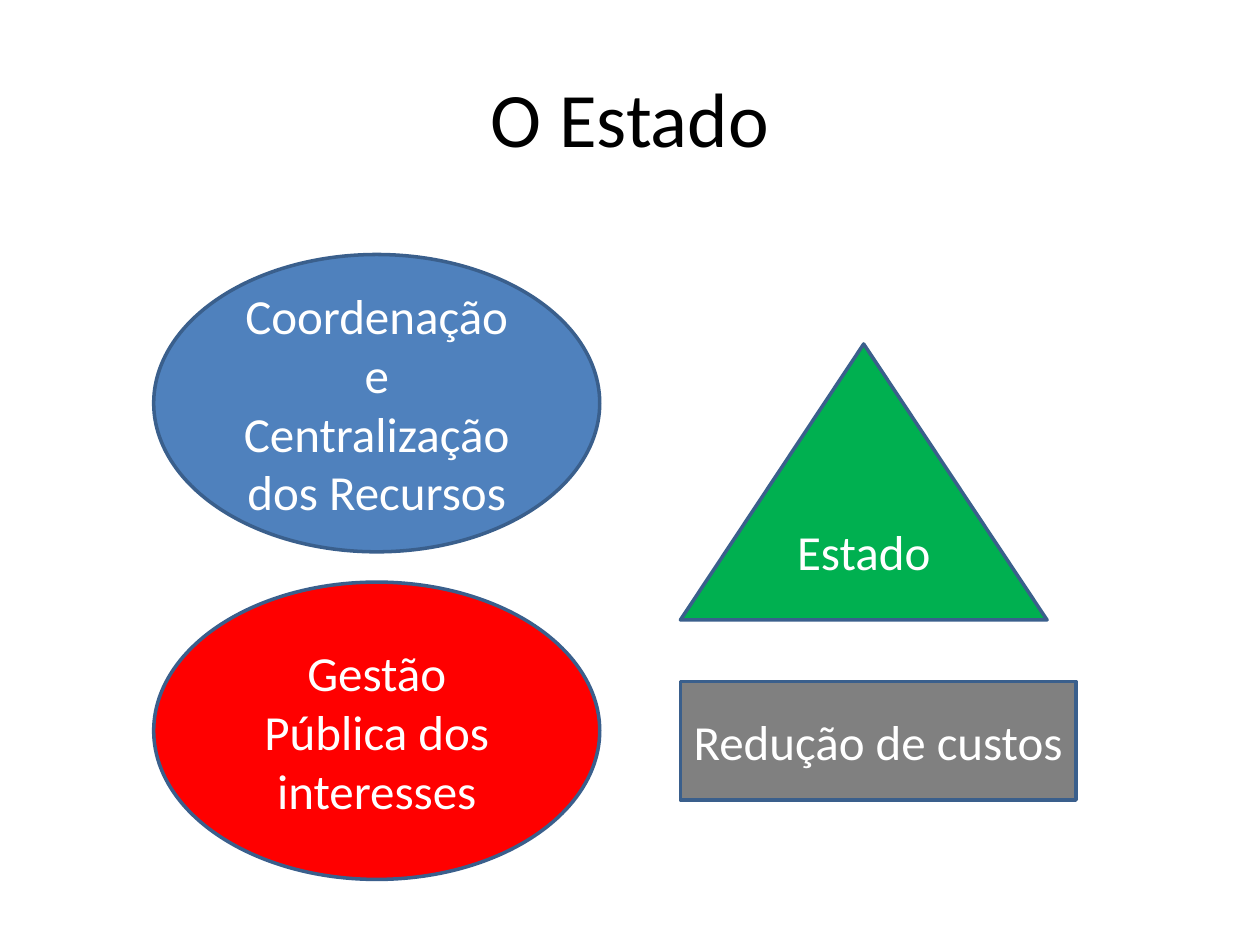
from pptx import Presentation
from pptx import util as u
from pptx.dml.color import RGBColor
from pptx.enum import shapes, text

COLORS = {
    "title": "000000",
    "text": "FFFFFF",
    "outline": "3A5F8C",
    "blue": "4F81BD",
    "red": "FF0000",
    "green": "00B050",
    "gray": "808080",
}
SHAPE = shapes.MSO_SHAPE
ELLIPSE_LEFT, ELLIPSE_SIZE = 1.22, (3.54, 2.36)
RIGHT_LEFT = 5.4


def rgb(name):
    return RGBColor.from_string(COLORS[name])


def place(sp, left, top, width, height):
    box = {"left": left, "top": top, "width": width, "height": height}
    for name, value in box.items():
        setattr(sp, name, u.Inches(value))


def write(sp, content, size, color):
    tf = sp.text_frame
    for name, value in {"word_wrap": True, "vertical_anchor": text.MSO_ANCHOR.MIDDLE}.items():
        setattr(tf, name, value)
    p = tf.paragraphs[0]
    p.alignment = text.PP_ALIGN.CENTER
    r = p.add_run()
    r.text = content
    for name, value in {"name": "Calibri", "size": u.Pt(size)}.items():
        setattr(r.font, name, value)
    r.font.color.rgb = rgb(color)


def add_title(s, content):
    sp = s.shapes.title
    place(sp, 0.5, 0.3, 9, 1.25)
    write(sp, content, 44, "title")


def add_figure(s, kind, left, top, size, fill, content):
    sp = s.shapes.add_shape(kind, *(u.Inches(v) for v in (left, top, *size)))
    sp.shadow.inherit = False
    sp.fill.solid()
    sp.fill.fore_color.rgb = rgb(fill)
    sp.line.color.rgb = rgb("outline")
    sp.line.width = u.Pt(2)
    write(sp, content, 28, "text")


def main():
    prs = Presentation()
    prs.slide_width, prs.slide_height = u.Inches(10), u.Inches(7.5)
    s = prs.slides.add_slide(prs.slide_layouts[5])
    add_title(s, "O Estado")
    figures = [
        (SHAPE.OVAL, ELLIPSE_LEFT, 2.02, ELLIPSE_SIZE, "blue",
         "Coordenação e Centralização dos Recursos"),
        (SHAPE.OVAL, ELLIPSE_LEFT, 4.62, ELLIPSE_SIZE, "red",
         "Gestão Pública dos interesses"),
        (SHAPE.ISOSCELES_TRIANGLE, RIGHT_LEFT, 2.73, (2.91, 2.19), "green", "Estado"),
        (SHAPE.RECTANGLE, RIGHT_LEFT, 5.41, (3.14, 0.94), "gray", "Redução de custos"),
    ]
    for figure in figures:
        add_figure(s, *figure)
    prs.save("out.pptx")


if __name__ == "__main__":
    main()
